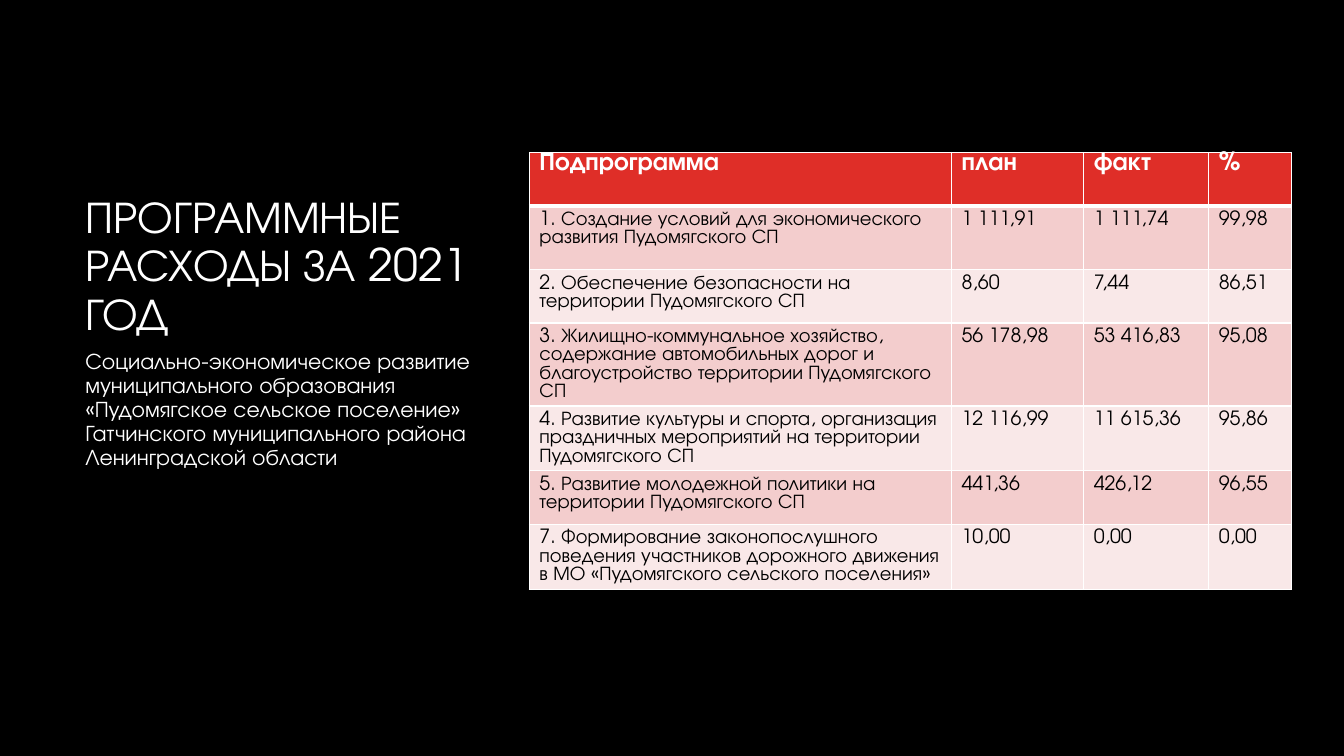
from pptx import Presentation
from pptx.dml.color import RGBColor
from pptx.enum.text import MSO_ANCHOR
from pptx.oxml import parse_xml
from pptx.oxml.ns import nsdecls
from pptx.util import Cm, Pt

TOP, BOTTOM = MSO_ANCHOR.TOP, MSO_ANCHOR.BOTTOM
FONT = "TeX Gyre Adventor"
WHITE, BLACK, RED = "FFFFFF", "000000", "DF2E28"
ROW_FILLS = ["F9E8E8", "F3CDCD"]


def style_text(frame, size, color, spacing, bold=False):
    paragraph = frame.paragraphs[0]
    paragraph.line_spacing = spacing
    font = paragraph.runs[0].font
    font.name, font.size, font.bold = FONT, Pt(size), bold
    font.color.rgb = RGBColor.from_string(color)


def add_borders(cell, bottom_width):
    properties = cell._tc.get_or_add_tcPr()
    widths = {"lnL": 1, "lnR": 1, "lnT": 1, "lnB": bottom_width}
    for position, (side, width) in enumerate(widths.items()):
        properties.insert(position, parse_xml(
            f'<a:{side} {nsdecls("a")} w="{Pt(width)}"><a:solidFill>'
            f'<a:srgbClr val="{WHITE}"/></a:solidFill></a:{side}>'))


presentation = Presentation()
presentation.slide_width, presentation.slide_height = Cm(33.87), Cm(19.05)
slide = presentation.slides.add_slide(presentation.slide_layouts[6])
slide.background.fill.solid()
slide.background.fill.fore_color.rgb = RGBColor.from_string(BLACK)

# Heading and programme name
captions = [
    ("ПРОГРАММНЫЕ РАСХОДЫ ЗА 2021 ГОД", 4.24, 4.45, 32, BOTTOM),
    ("Социально-экономическое развитие муниципального образования "
     "«Пудомягское сельское поселение» Гатчинского муниципального района "
     "Ленинградской области", 8.69, 8.59, 16, TOP),
]
for text, top, height, size, anchor in captions:
    frame = slide.shapes.add_textbox(Cm(1.9), Cm(top), Cm(11.43), Cm(height)).text_frame
    frame.word_wrap = True
    frame.vertical_anchor = anchor
    frame.text = text
    style_text(frame, size, WHITE, 0.9)

# Spending by subprogramme
spending = [
    ("Подпрограмма", "план", "факт", "%"),
    ("1. Создание условий для экономического развития Пудомягского СП",
     "1 111,91", "1 111,74", "99,98"),
    ("2. Обеспечение безопасности на территории Пудомягского СП",
     "8,60", "7,44", "86,51"),
    ("3. Жилищно-коммунальное хозяйство, содержание автомобильных дорог и "
     "благоустройство территории Пудомягского СП",
     "56 178,98", "53 416,83", "95,08"),
    ("4. Развитие культуры и спорта, организация праздничных мероприятий на "
     "территории Пудомягского СП",
     "12 116,99", "11 615,36", "95,86"),
    ("5. Развитие молодежной политики на территории Пудомягского СП",
     "441,36", "426,12", "96,55"),
    ("7. Формирование законопослушного поведения участников дорожного движения "
     "в МО «Пудомягского сельского поселения»",
     "10,00", "0,00", "0,00"),
]
column_widths = [10.64, 3.33, 3.15, 2.08]
row_heights = [1.35, 1.6] + [1.35] * 5
table = slide.shapes.add_table(
    len(spending), len(column_widths), Cm(13.34), Cm(3.84),
    Cm(sum(column_widths)), Cm(sum(row_heights))).table
for column, width in zip(table.columns, column_widths):
    column.width = Cm(width)

for row_index, (values, height) in enumerate(zip(spending, row_heights)):
    table.rows[row_index].height = Cm(height)
    is_header = row_index == 0
    for column_index, value in enumerate(values):
        cell = table.cell(row_index, column_index)
        cell.text = value
        cell.fill.solid()
        fill = RED if is_header else ROW_FILLS[row_index % 2]
        cell.fill.fore_color.rgb = RGBColor.from_string(fill)
        add_borders(cell, 3 if is_header else 1)
        style_text(cell.text_frame, 18 if is_header else 14,
                   WHITE if is_header else BLACK, Pt(13), is_header)

presentation.save("out.pptx")
